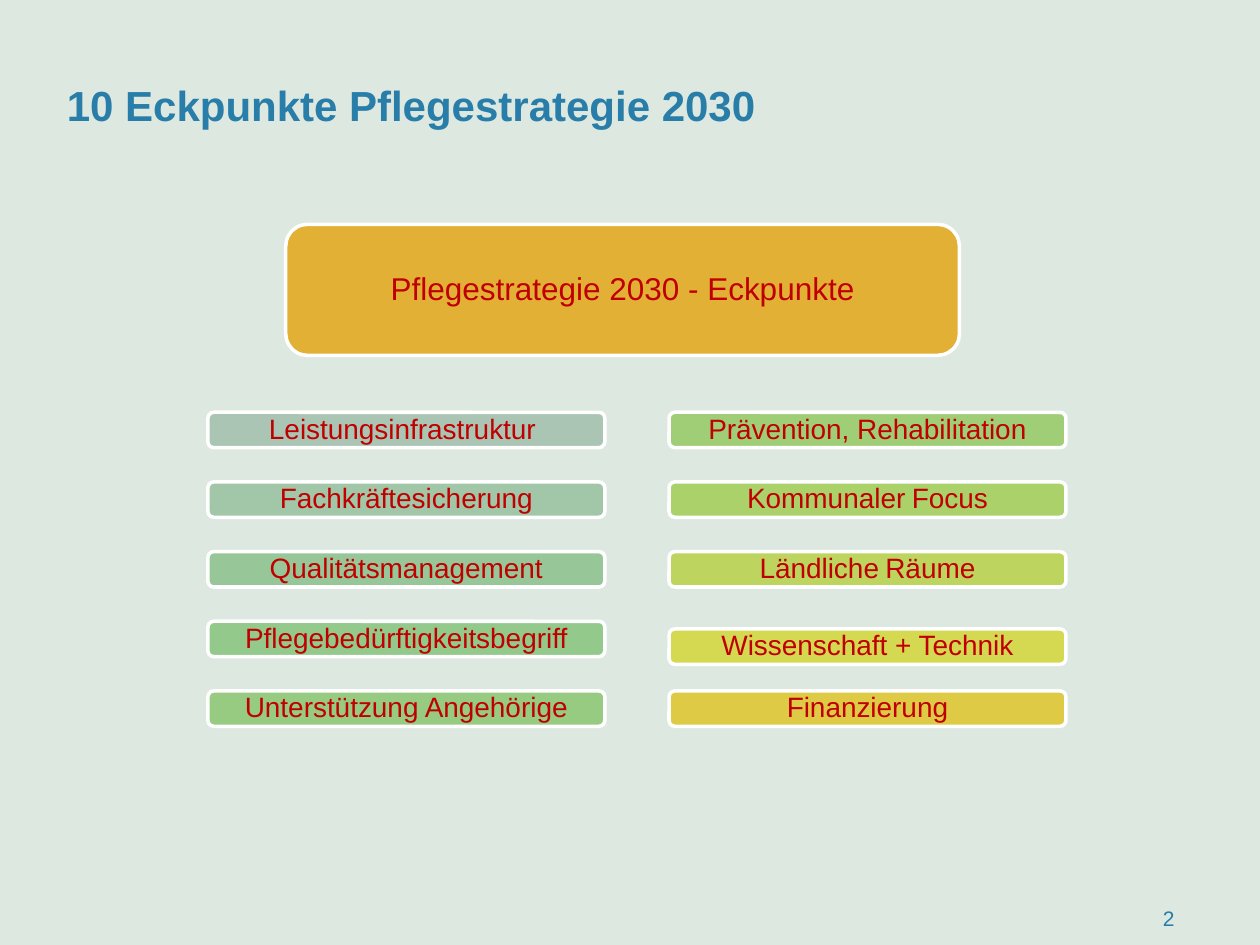
from dataclasses import dataclass

from pptx import Presentation
from pptx.dml.color import RGBColor
from pptx.enum.shapes import MSO_SHAPE
from pptx.enum.text import MSO_ANCHOR, PP_ALIGN
from pptx.util import Pt


@dataclass(frozen=True)
class Theme:
    font: str = "Arial"
    background: str = "DDE8E1"
    title: str = "287EA8"
    number: str = "287DA8"
    label: str = "C00000"
    outline: str = "FFFFFF"
    heading_fill: str = "E3B036"
    title_size: float = 24
    heading_size: float = 18
    label_size: float = 16
    gap_size: float = 13
    number_size: float = 12


@dataclass(frozen=True)
class KeyPoint:
    label: str
    fill: str
    shift: float = 0
    narrow_gap: bool = False


THEME = Theme()

LEFT_POINTS = [
    KeyPoint("Leistungsinfrastruktur ", "AAC5B4"),
    KeyPoint("Fachkräftesicherung", "A1C6A8"),
    KeyPoint("Qualitätsmanagement", "97C799"),
    KeyPoint("Pflegebedürftigkeitsbegriff", "94C98C"),
    KeyPoint("Unterstützung Angehörige", "97CB81"),
]
RIGHT_POINTS = [
    KeyPoint("Prävention, Rehabilitation", "9FCE76"),
    KeyPoint("Kommunaler Focus", "ABD16A", narrow_gap=True),
    KeyPoint("Ländliche Räume", "BDD55E", narrow_gap=True),
    KeyPoint("Wissenschaft + Technik", "D4D951", shift=4.4),
    KeyPoint("Finanzierung", "DECA44"),
]

# Grid of the key points
COLUMN_LEFTS = (118.8, 382.3)
FIRST_TOP, ROW_PITCH = 235.6, 39.8
POINT_WIDTH, POINT_HEIGHT = 226.8, 20.2


def style_span(span, size: float, color: str, bold: bool = False) -> None:
    span.font.name = THEME.font
    span.font.size = Pt(size)
    span.font.bold = bold
    span.font.color.rgb = RGBColor.from_string(color)


def draw_box(page, left: float, top: float, width: float, height: float,
             fill: str, label: str, size: float, narrow_gap: bool = False) -> None:
    box = page.shapes.add_shape(MSO_SHAPE.ROUNDED_RECTANGLE,
                                Pt(left), Pt(top), Pt(width), Pt(height))
    box.shadow.inherit = False
    box.fill.solid()
    box.fill.fore_color.rgb = RGBColor.from_string(fill)
    box.line.color.rgb = RGBColor.from_string(THEME.outline)
    box.line.width = Pt(2)

    frame = box.text_frame
    frame.word_wrap = True
    frame.vertical_anchor = MSO_ANCHOR.MIDDLE
    frame.margin_left = frame.margin_right = Pt(5)
    frame.margin_top = frame.margin_bottom = Pt(2)
    para = frame.paragraphs[0]
    para.alignment = PP_ALIGN.CENTER
    para.line_spacing = 0.9
    # A narrow gap is a smaller space between two words
    for text in label.partition(" ") if narrow_gap else (label,):
        span = para.add_run()
        span.text = text
        style_span(span, THEME.gap_size if text == " " else size, THEME.label)


def draw_column(page, left: float, points: list[KeyPoint]) -> None:
    for row, point in enumerate(points):
        draw_box(page, left, FIRST_TOP + row * ROW_PITCH + point.shift,
                 POINT_WIDTH, POINT_HEIGHT, point.fill, point.label,
                 THEME.label_size, point.narrow_gap)


def draw_title(page, text: str) -> None:
    title = page.shapes.title
    title.left, title.top, title.width, title.height = Pt(31), Pt(37.4), Pt(487.4), Pt(41.8)
    frame = title.text_frame
    frame.text = text
    frame.vertical_anchor = MSO_ANCHOR.MIDDLE
    para = frame.paragraphs[0]
    para.alignment = PP_ALIGN.LEFT
    para.line_spacing = 1.1
    style_span(para.runs[0], THEME.title_size, THEME.title, bold=True)


def draw_page_number(page, text: str) -> None:
    box = page.shapes.add_textbox(Pt(611.3), Pt(504), Pt(67), Pt(23.8))
    frame = box.text_frame
    frame.word_wrap = True
    frame.margin_top, frame.margin_bottom = Pt(13.5), Pt(0)
    frame.text = text
    para = frame.paragraphs[0]
    para.alignment = PP_ALIGN.RIGHT
    style_span(para.runs[0], THEME.number_size, THEME.number)


def main() -> None:
    deck = Presentation()
    deck.slide_width, deck.slide_height = Pt(720), Pt(540)
    page = deck.slides.add_slide(deck.slide_layouts[5])
    page.background.fill.solid()
    page.background.fill.fore_color.rgb = RGBColor.from_string(THEME.background)

    draw_title(page, "10 Eckpunkte Pflegestrategie 2030")

    # Key points in two columns
    for left, points in zip(COLUMN_LEFTS, (LEFT_POINTS, RIGHT_POINTS)):
        draw_column(page, left, points)

    # Heading box above the columns
    draw_box(page, 163.3, 128.2, 385, 74.9, THEME.heading_fill,
             "Pflegestrategie 2030 - Eckpunkte", THEME.heading_size)

    draw_page_number(page, "2")
    deck.save("out.pptx")


if __name__ == "__main__":
    main()
